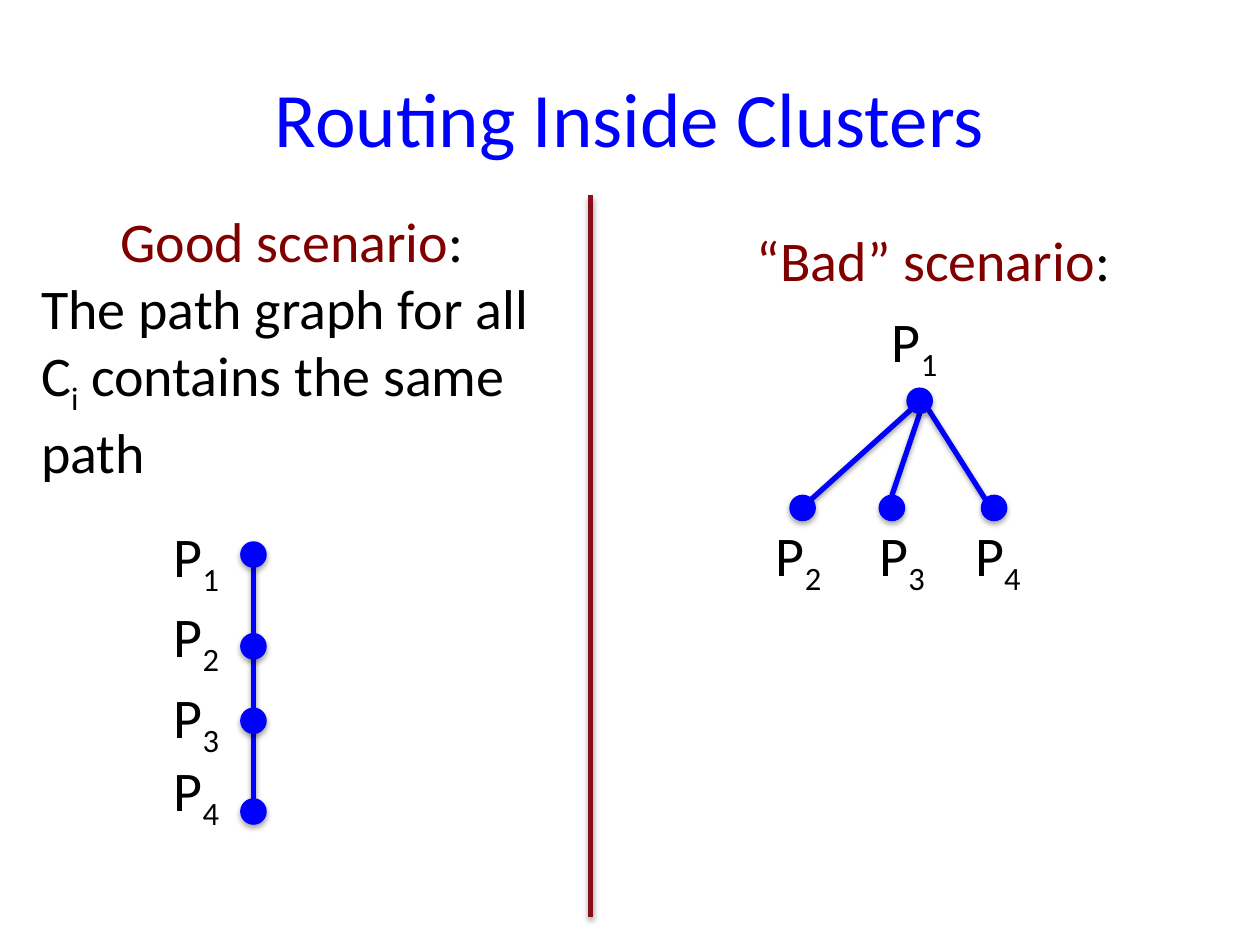
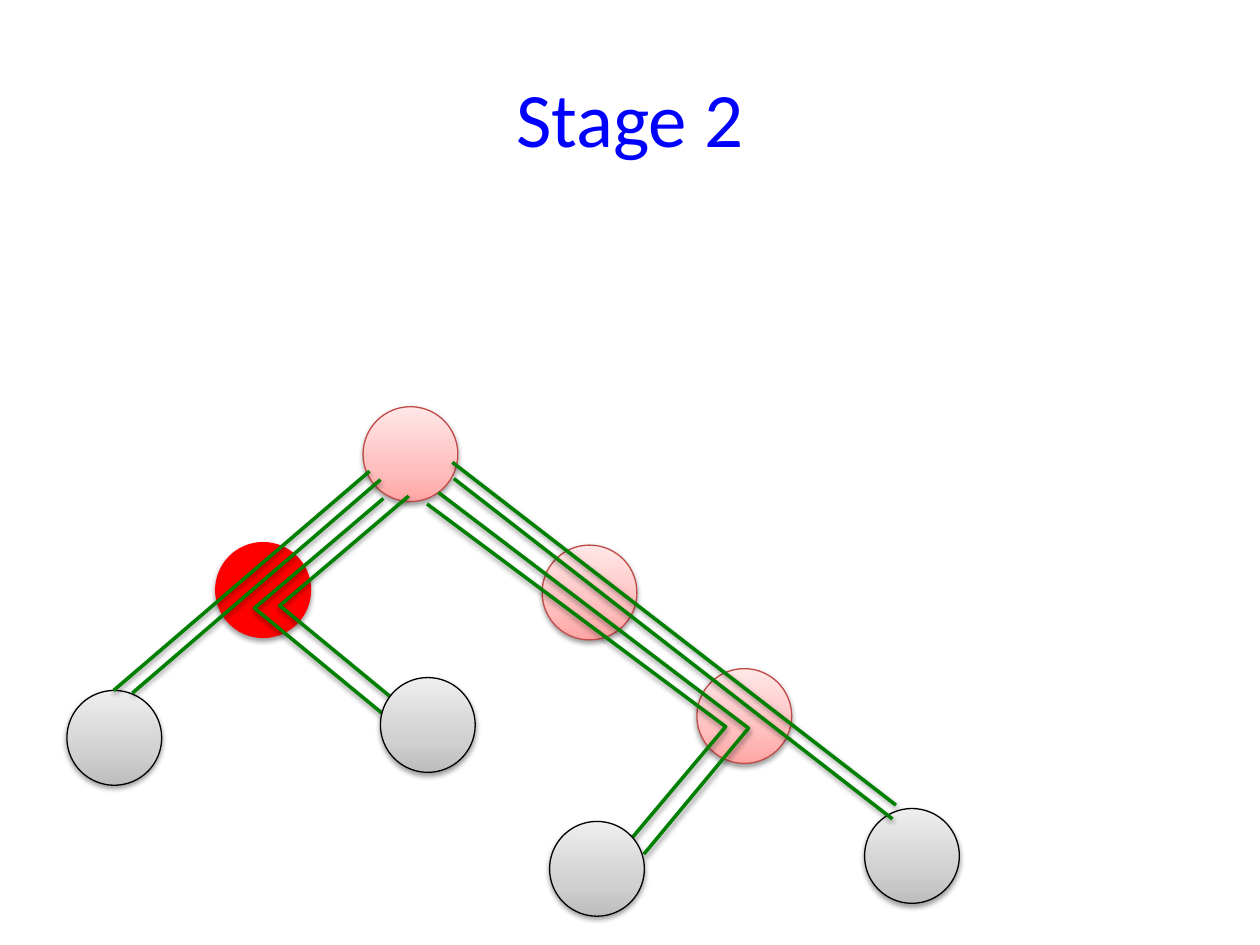
from copy import deepcopy

from pptx import Presentation
from pptx.dml.color import RGBColor
from pptx.enum.shapes import MSO_CONNECTOR, MSO_SHAPE
from pptx.enum.text import MSO_ANCHOR, MSO_AUTO_SIZE, PP_ALIGN
from pptx.oxml import parse_xml
from pptx.oxml.ns import nsdecls, qn
from pptx.util import Cm, Pt

COLORS = {
    "blue": "0000FF",
    "maroon": "800000",
    "divider": "89101B",
    "black": "000000",
    "red": "FF0000",
    "pink_line": "BF4C48",
    "green": "008000",
}
PINK = ("FFA6A5", "FFC0BF", "FFE7E7")
GRAY = ("BDBDBD", "D1D1D1", "EEEEEE")
STOP_POSITIONS = (0, 0.35, 1)
FONT = "Calibri"
TITLE_BOX = (1.27, 0.76, 22.86, 3.17)
DOT_SIZE = 0.51
NODE_SIZE = 1.91


def rgb(name):
    return RGBColor.from_string(COLORS[name])


def add_text(slide, box, paragraphs, size=32, align=PP_ALIGN.LEFT,
             anchor=MSO_ANCHOR.TOP, wrap=True, grow=True):
    text_box = slide.shapes.add_textbox(*map(Cm, box))
    frame = text_box.text_frame
    frame.word_wrap = wrap
    frame.vertical_anchor = anchor
    frame.auto_size = MSO_AUTO_SIZE.SHAPE_TO_FIT_TEXT if grow else MSO_AUTO_SIZE.NONE
    for index, runs in enumerate(paragraphs):
        paragraph = frame.paragraphs[0] if index == 0 else frame.add_paragraph()
        paragraph.alignment = align if index == 0 else PP_ALIGN.LEFT
        for text, color, baseline in runs:
            run = paragraph.add_run()
            run.text = text
            run.font.name = FONT
            run.font.size = Pt(size)
            run.font.color.rgb = rgb(color)
            if baseline:
                run.font._element.set("baseline", str(baseline * 1000))


def add_title(slide, text):
    add_text(slide, TITLE_BOX, [[(text, "blue", 0)]], size=44,
             align=PP_ALIGN.CENTER, anchor=MSO_ANCHOR.MIDDLE, grow=False)


def add_label(slide, left, top, number):
    runs = [("P", "black", 0), (str(number), "black", -25)]
    add_text(slide, (left, top, 1.6, 1.63), [runs], wrap=False)


def finish_line(shape, color, width, distance=1.6, opacity=38):
    shape.line.color.rgb = rgb(color)
    shape.line.width = Pt(width)
    shape._element.spPr.append(parse_xml(
        f'<a:effectLst {nsdecls("a")}>'
        f'<a:outerShdw blurRad="{Pt(3.1)}" dist="{Pt(distance)}" dir="5400000" rotWithShape="0">'
        f'<a:srgbClr val="{COLORS["black"]}"><a:alpha val="{opacity * 1000}"/></a:srgbClr>'
        '</a:outerShdw></a:effectLst>'))


def add_line(slide, start, end, color="blue", width=3):
    line = slide.shapes.add_connector(MSO_CONNECTOR.STRAIGHT, *map(Cm, start + end))
    finish_line(line, color, width)


def add_dot(slide, center_x, center_y):
    radius = DOT_SIZE / 2
    dot = slide.shapes.add_shape(
        MSO_SHAPE.OVAL, *map(Cm, (center_x - radius, center_y - radius, DOT_SIZE, DOT_SIZE)))
    dot.fill.solid()
    dot.fill.fore_color.rgb = rgb("blue")
    finish_line(dot, "blue", 0.75, distance=1.8, opacity=35)


def fill_gradient(shape, shades):
    shape.fill.gradient()
    shape.fill.gradient_angle = 90
    first_stop = shape._element.spPr.find(".//" + qn("a:gs"))
    first_stop.addnext(deepcopy(first_stop))
    for stop, position, shade in zip(shape.fill.gradient_stops, STOP_POSITIONS, shades):
        stop.position = position
        stop.color.rgb = RGBColor.from_string(shade)


def add_node(slide, left, top, shades, line_color):
    node = slide.shapes.add_shape(
        MSO_SHAPE.OVAL, *map(Cm, (left, top, NODE_SIZE, NODE_SIZE)))
    if shades:
        fill_gradient(node, shades)
    else:
        node.fill.solid()
        node.fill.fore_color.rgb = rgb("red")
    finish_line(node, line_color, 0.75)


def add_bent_route(slide, points):
    start, *others = [(Cm(x), Cm(y)) for x, y in points]
    builder = slide.shapes.build_freeform(*start, scale=1.0)
    builder.add_line_segments(others, close=False)
    route = builder.convert_to_shape()
    route.fill.background()
    finish_line(route, "green", 2)


def draw_good_scenario(slide, left, top, width):
    add_text(slide, (left, top, width, 5.74), [
        [("Good scenario", "maroon", 0), (":", "black", 0)],
        [("The path graph for all C", "black", 0), ("i", "black", -25),
         (" contains the same path", "black", 0)],
    ], align=PP_ALIGN.CENTER)
    dot_x = left + 4.53
    dot_rows = [top + offset for offset in (7.14, 8.99, 10.49, 12.32)]
    label_rows = [top + offset for offset in (6.35, 7.97, 9.6, 11.07)]
    add_line(slide, (dot_x, dot_rows[0] + DOT_SIZE / 2), (dot_x, dot_rows[-1] - DOT_SIZE / 2))
    for number, (dot_y, label_y) in enumerate(zip(dot_rows, label_rows), 1):
        add_dot(slide, dot_x, dot_y)
        add_label(slide, left + 2.67, label_y, number)


def draw_bad_scenario(slide, left, top, width):
    add_text(slide, (left, top, width, 1.63),
             [[("“Bad” scenario", "maroon", 0), (":", "black", 0)]], align=PP_ALIGN.CENTER)
    root_x, root_y, child_y = left + 5.03, top + 3.66, top + 5.82
    add_label(slide, left + 4.22, top + 1.63, 1)
    children = [(2, -1, 2.67, 1.88), (3, 0, 4.47, 3.97), (4, 1, 6.53, 5.9)]
    for number, side, dot_offset, label_offset in children:
        child_x = left + dot_offset
        across = 0.18 * side
        down = 0.18 if side else DOT_SIZE / 2
        add_line(slide, (root_x + across, root_y + down), (child_x - across, child_y - down))
        add_dot(slide, child_x, child_y)
        add_label(slide, left + label_offset, top + 5.94, number)
    add_dot(slide, root_x, root_y)


def draw_routing_tree(slide, left, top):
    def place(x, y):
        return left + x, top + y

    add_node(slide, *place(3, 2.74), None, "red")
    for position in [(5.97, 0), (12.7, 5.28), (9.58, 2.79)]:
        add_node(slide, *place(*position), PINK, "pink_line")
    for position in [(0, 5.72), (16.08, 8.1)]:
        add_node(slide, *place(*position), GRAY, "black")

    straight_routes = [
        ((6.1, 1.3), (0.94, 5.72)),
        ((6.32, 1.47), (1.32, 5.77)),
        ((7.77, 1.12), (16.71, 8.03)),
        ((7.8, 1.45), (16.64, 8.31)),
    ]
    for start, end in straight_routes:
        add_line(slide, place(*start), place(*end), color="green", width=2)

    right_bends = [
        [(7.49, 1.73), (13.74, 6.48), (11.63, 9.02)],
        [(7.26, 1.96), (13.28, 6.45), (11.25, 8.86)],
    ]
    left_bend = [(6.38, 1.85), (3.78, 4.06), (6.38, 6.2)]
    shifted_bend = [(x + 0.51, y - 0.05) for x, y in left_bend]
    for bend in right_bends + [left_bend, shifted_bend]:
        add_bent_route(slide, [place(*point) for point in bend])
    for position in [(9.73, 8.36), (6.32, 5.46)]:
        add_node(slide, *place(*position), GRAY, "black")


def add_slide(presentation, title):
    slide = presentation.slides.add_slide(presentation.slide_layouts[6])
    add_title(slide, title)
    return slide


def build_clusters_slide(presentation):
    slide = add_slide(presentation, "Routing Inside Clusters")
    draw_good_scenario(slide, 0.58, 4.04, 10.62)
    add_line(slide, (11.91, 3.94), (11.91, 18.49), color="divider")
    draw_bad_scenario(slide, 13.51, 4.42, 10.62)


def build_stage_slide(presentation):
    slide = add_slide(presentation, "Stage 2")
    draw_routing_tree(slide, 1.35, 8.2)


def main():
    presentation = Presentation()
    presentation.slide_width = Cm(25.4)
    presentation.slide_height = Cm(19.05)
    build_clusters_slide(presentation)
    build_stage_slide(presentation)
    presentation.save("out.pptx")


if __name__ == "__main__":
    main()
